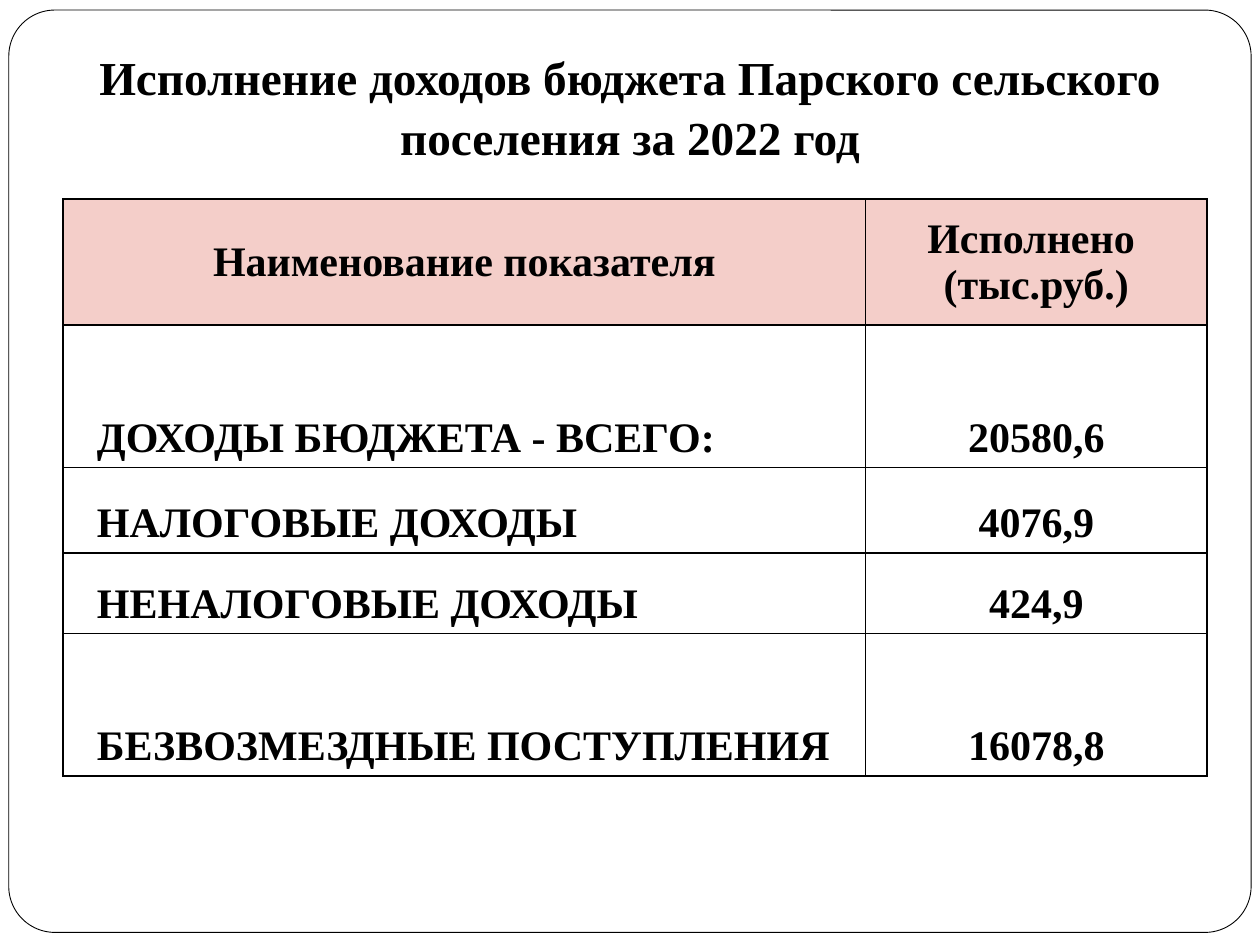
from lxml.etree import SubElement
from pptx import Presentation
from pptx.dml.color import RGBColor
from pptx.enum.shapes import MSO_SHAPE
from pptx.enum.text import MSO_ANCHOR, MSO_AUTO_SIZE, PP_ALIGN
from pptx.oxml.ns import qn
from pptx.util import Inches, Pt

COLORS = {"text": "000000", "line": "000000", "paper": "FFFFFF", "header": "F4CEC9"}
FONT = "Times New Roman"
GRID_COLUMNS, GRID_ROWS = 40, 30
COLUMN_WIDTHS = [25.48, 10.84]
ROW_HEIGHTS = [4, 4.52, 2.72, 2.56, 4.52]
HEADER = [["Наименование показателя"], ["Исполнено ", "(тыс.руб.)"]]
INCOME = [
    ("ДОХОДЫ БЮДЖЕТА - ВСЕГО:", "20580,6"),
    ("НАЛОГОВЫЕ ДОХОДЫ", "4076,9"),
    ("НЕНАЛОГОВЫЕ ДОХОДЫ", "424,9"),
    ("БЕЗВОЗМЕЗДНЫЕ ПОСТУПЛЕНИЯ", "16078,8"),
]


class BudgetSlide:
    """Holds the style and the current slide, with lengths in grid columns and rows."""

    def __init__(self, presentation):
        """Add a title-only slide."""
        self.column = presentation.slide_width / GRID_COLUMNS
        self.row = presentation.slide_height / GRID_ROWS
        self.slide = presentation.slides.add_slide(presentation.slide_layouts[5])

    def box(self, left, top, width, height):
        """Turn grid units into slide lengths."""
        return (round(left * self.column), round(top * self.row),
                round(width * self.column), round(height * self.row))

    def color(self, name):
        """Look up a named colour."""
        return RGBColor.from_string(COLORS[name])

    def add_lines(self, text_frame, lines, size, align):
        """Add bold lines, one paragraph each."""
        for index, line in enumerate(lines):
            paragraph = text_frame.add_paragraph() if index else text_frame.paragraphs[0]
            paragraph.alignment = align
            run = paragraph.add_run()
            run.text = line
            run.font.name = FONT
            run.font.size = Pt(size)
            run.font.bold = True
            run.font.color.rgb = self.color("text")

    def frame(self, left, top, width, height):
        """Draw the rounded page border behind everything else."""
        shape = self.slide.shapes.add_shape(
            MSO_SHAPE.ROUNDED_RECTANGLE, *self.box(left, top, width, height))
        shape.adjustments[0] = 0.05
        shape.shadow.inherit = False
        shape.fill.solid()
        shape.fill.fore_color.rgb = self.color("paper")
        shape.line.color.rgb = self.color("line")
        shape.line.width = Pt(0.5)
        self.slide.shapes.title.element.addprevious(shape.element)

    def title(self, text, left, top, width, height):
        """Place and fill the title placeholder."""
        title = self.slide.shapes.title
        title.left, title.top, title.width, title.height = self.box(left, top, width, height)
        text_frame = title.text_frame
        text_frame.word_wrap = True
        text_frame.auto_size = MSO_AUTO_SIZE.NONE
        text_frame.vertical_anchor = MSO_ANCHOR.BOTTOM
        text_frame.margin_bottom = Inches(0.1)
        self.add_lines(text_frame, [text], 27, PP_ALIGN.CENTER)
        text_frame.paragraphs[0].line_spacing = 1.05

    def cell(self, cell, lines, fill, anchor, align):
        """Fill one table cell and outline its four sides."""
        cell.vertical_anchor = anchor
        if align == PP_ALIGN.LEFT:
            cell.margin_left = Inches(0.27)
        self.add_lines(cell.text_frame, lines, 24, align)
        properties = cell._tc.get_or_add_tcPr()
        for side in ("lnL", "lnR", "lnT", "lnB"):
            border = SubElement(properties, qn(f"a:{side}"), w=str(Pt(1)))
            solid = SubElement(border, qn("a:solidFill"))
            SubElement(solid, qn("a:srgbClr"), val=COLORS["line"])
        cell.fill.solid()
        cell.fill.fore_color.rgb = self.color(fill)

    def table(self, left, top):
        """Build the income table with its header row."""
        box = self.box(left, top, sum(COLUMN_WIDTHS), sum(ROW_HEIGHTS))
        table = self.slide.shapes.add_table(
            len(ROW_HEIGHTS), len(COLUMN_WIDTHS), *box).table
        for column, width in zip(table.columns, COLUMN_WIDTHS):
            column.width = round(width * self.column)
        for row, height in zip(table.rows, ROW_HEIGHTS):
            row.height = round(height * self.row)
        for index, lines in enumerate(HEADER):
            self.cell(table.cell(0, index), lines, "header",
                      MSO_ANCHOR.MIDDLE, PP_ALIGN.CENTER)
        for index, (name, amount) in enumerate(INCOME, 1):
            self.cell(table.cell(index, 0), [name], "paper",
                      MSO_ANCHOR.BOTTOM, PP_ALIGN.LEFT)
            self.cell(table.cell(index, 1), [amount], "paper",
                      MSO_ANCHOR.BOTTOM, PP_ALIGN.CENTER)


def main():
    """Build and save the presentation."""
    presentation = Presentation()
    presentation.slide_width, presentation.slide_height = Inches(10), Inches(7.5)
    slide = BudgetSlide(presentation)
    slide.frame(0.28, 0.32, 39.44, 29.28)
    slide.title("Исполнение доходов бюджета Парского сельского поселения за 2022 год",
                1, 1.2, 38, 4.44)
    slide.table(2, 6.32)
    presentation.save("out.pptx")


if __name__ == "__main__":
    main()
